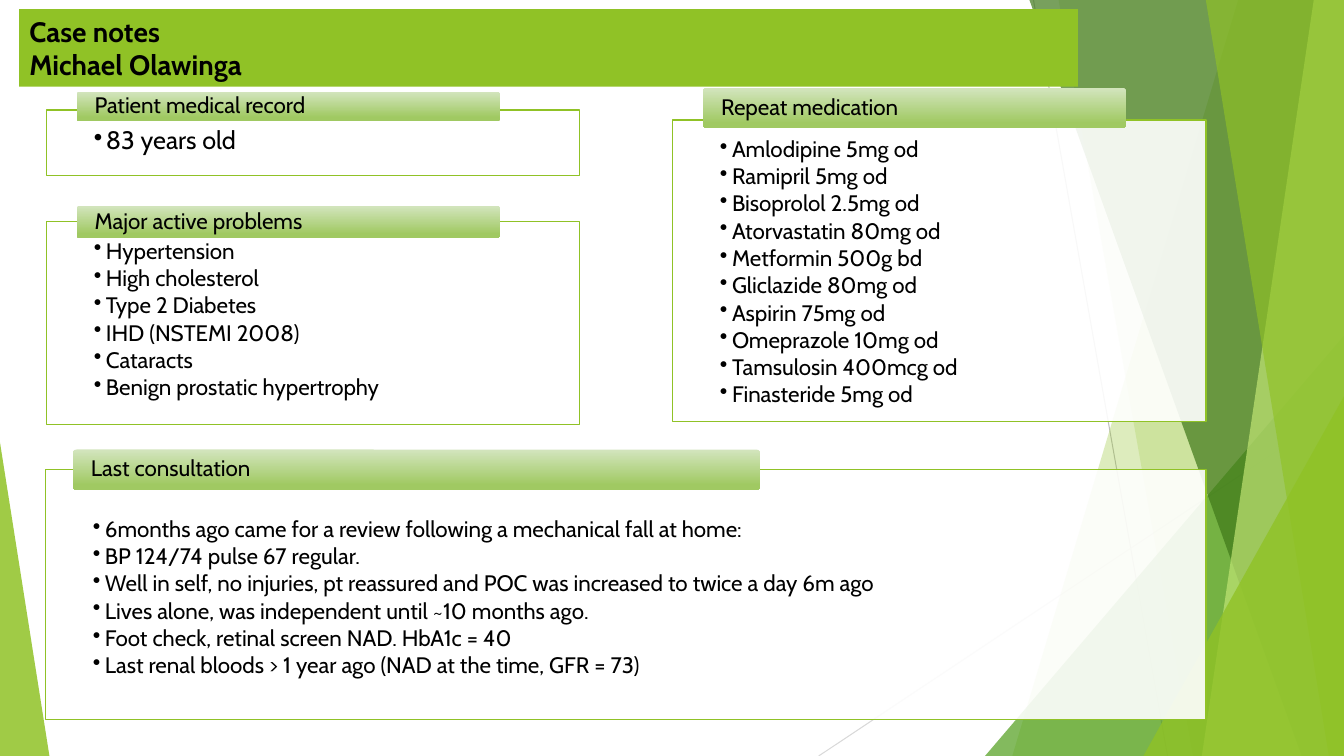
import pptx
import pptx.util
import pptx.dml.color
import pptx.enum.dml
import pptx.enum.shapes
import pptx.enum.text
import pptx.oxml
import pptx.oxml.ns
from pptx.util import Inches

COLOURS = {
    "lime": "90C226", "leaf": "54A021", "forest": "3F7819", "pale": "C0E474",
    "mist": "D3E5BE", "moss": "A0C962", "white": "FFFFFF", "black": "000000",
    "grey": "BFBFBF", "silver": "D9D9D9",
}
FONT = "Cabin"

LINES = [((10.25, 0), (11.58, 7.5), "grey"), ((13.33, 4.03), (8.12, 7.5), "silver")]
LEFT_BANDS = [
    ([(12.28, 0), (13.33, 0), (13.33, 7.5), (10.04, 7.5)], "lime", 30),
    ([(10.5, 0), (13.33, 0), (13.33, 7.5), (11.83, 7.5)], "lime", 20),
]
RIGHT_BANDS = [
    ([(10.21, 0), (13.33, 0), (13.33, 7.5), (12.91, 7.5)], "forest", 70),
    ([(13.03, 0), (13.33, 0), (13.33, 7.5), (11.92, 7.5)], "pale", 70),
    ([(11.96, 0), (13.33, 0), (13.33, 7.5), (13.18, 7.5)], "lime", 65),
]
FRONT_TRIANGLES = [((11.34, 3.93, 1.99, 3.57), 1, "lime", 80),
                   ((0, 4.39, 0.49, 3.11), 0, "lime", 85)]

PANELS = [
    {"heading": "Patient medical record", "tab": (0.76, 0.91, 4.2, 0.29),
     "body": (0.46, 1.09, 5.29, 0.65), "size": 18, "items": ["83 years old"]},
    {"heading": "Major active problems", "tab": (0.76, 2.04, 4.2, 0.32),
     "body": (0.46, 2.2, 5.29, 2.01),
     "items": ["Hypertension", "High cholesterol", "Type 2 Diabetes",
               "IHD (NSTEMI 2008)", "Cataracts", "Benign prostatic hypertrophy"]},
    {"heading": "Repeat medication", "tab": (6.97, 0.87, 4.2, 0.4),
     "body": (6.67, 1.19, 5.29, 2.99),
     "items": ["Amlodipine 5mg od", "Ramipril 5mg od", "Bisoprolol 2.5mg od",
               "Atorvastatin 80mg od", "Metformin 500g bd", "Gliclazide 80mg od",
               "Aspirin 75mg od", "Omeprazole 10mg od", "Tamsulosin 400mcg od",
               "Finasteride 5mg od"]},
    {"heading": "Last consultation", "tab": (0.72, 4.46, 6.82, 0.4),
     "body": (0.45, 4.66, 11.51, 2.48), "top": 0.48,
     "items": ["6months ago came for a review following a mechanical fall at home:",
               "BP 124/74 pulse 67 regular.",
               "Well in self, no injuries, pt reassured and POC was increased to twice a day 6m ago",
               "Lives alone, was independent until ~10 months ago.",
               "Foot check, retinal screen NAD. HbA1c = 40",
               "Last renal bloods > 1 year ago (NAD at the time, GFR = 73)"]},
]


class NotesPage:
    """Draws styled elements of the patient notes on one slide."""

    def __init__(self, page):
        self.page = page
        self.shapes = page.shapes

    def colour(self, name):
        return pptx.dml.color.RGBColor.from_string(COLOURS[name])

    def paint(self, shape, name, opacity=100):
        shape.shadow.inherit = False
        shape.line.fill.background()
        shape.fill.solid()
        shape.fill.fore_color.rgb = self.colour(name)
        if opacity < 100:
            tint = shape.fill._xPr.find(".//" + pptx.oxml.ns.qn("a:srgbClr"))
            alpha = pptx.oxml.parse_xml(
                f'<a:alpha {pptx.oxml.ns.nsdecls("a")} val="{opacity * 1000}"/>')
            tint.append(alpha)

    def line(self, start, end, name):
        connector = self.shapes.add_connector(
            pptx.enum.shapes.MSO_CONNECTOR.STRAIGHT,
            *(Inches(value) for value in start + end))
        connector.line.color.rgb = self.colour(name)
        connector.line.width = pptx.util.Pt(0.75)
        connector._element.spPr.append(
            pptx.oxml.parse_xml(f'<a:effectLst {pptx.oxml.ns.nsdecls("a")}/>'))

    def band(self, corners, name, opacity):
        points = [(Inches(x), Inches(y)) for x, y in corners]
        builder = self.shapes.build_freeform(*points[0], scale=1.0)
        builder.add_line_segments(points[1:], close=True)
        self.paint(builder.convert_to_shape(), name, opacity)

    def box(self, kind, place):
        return self.shapes.add_shape(kind, *(Inches(value) for value in place))

    def triangle(self, place, apex, name, opacity):
        shape = self.box(pptx.enum.shapes.MSO_SHAPE.ISOSCELES_TRIANGLE, place)
        shape.adjustments[0] = apex
        self.paint(shape, name, opacity)

    def set_text(self, shape, lines, size, margins, middle=True, bold=False):
        frame = shape.text_frame
        frame.text = "\n".join(lines)
        frame.word_wrap = True
        frame.auto_size = pptx.enum.text.MSO_AUTO_SIZE.NONE
        anchors = pptx.enum.text.MSO_ANCHOR
        frame.vertical_anchor = anchors.MIDDLE if middle else anchors.TOP
        frame.margin_left = frame.margin_right = Inches(margins[0])
        frame.margin_top, frame.margin_bottom = Inches(margins[1]), Inches(margins[2])
        for para in frame.paragraphs:
            para.alignment = pptx.enum.text.PP_ALIGN.LEFT
            for span in para.runs:
                span.font.name = FONT
                span.font.size = pptx.util.Pt(size)
                span.font.bold = bold
                span.font.color.rgb = self.colour("black")
        return frame.paragraphs

    def bullet(self, para):
        para.line_spacing = 0.9
        para.space_after = pptx.util.Pt(2.2)
        properties = para._p.get_or_add_pPr()
        properties.set("marL", str(Inches(0.12)))
        properties.set("indent", str(-Inches(0.12)))
        properties.append(pptx.oxml.parse_xml(
            f'<a:buChar {pptx.oxml.ns.nsdecls("a")} char="•"/>'))

    def panel(self, heading, tab, body, items, size=16, top=0.18):
        frame = self.box(pptx.enum.shapes.MSO_SHAPE.RECTANGLE, body)
        self.paint(frame, "white", 90)
        frame.line.color.rgb = self.colour("lime")
        frame.line.width = pptx.util.Pt(1)
        for para in self.set_text(frame, items, size, (0.47, top, 0.09), middle=False):
            self.bullet(para)
        label = self.box(pptx.enum.shapes.MSO_SHAPE.ROUNDED_RECTANGLE, tab)
        label.adjustments[0] = 0.1
        self.paint(label, "mist")
        label.fill.gradient()
        label.fill.gradient_angle = 270
        for stop, position, name in zip(label.fill.gradient_stops, (0, 0.88), ("mist", "moss")):
            stop.position = position
            stop.color.rgb = self.colour(name)
        self.set_text(label, [heading], 16, (0.17, 0.01, 0.01))[0].line_spacing = 0.9

    def title(self, lines, place):
        title = self.shapes.title
        title.left, title.top, title.width, title.height = map(Inches, place)
        title.fill.solid()
        title.fill.fore_color.rgb = self.colour("lime")
        self.set_text(title, lines, 20, (0.1, 0.05, 0.05), bold=True)
        self.shapes._spTree.append(title._element)


def main():
    deck = pptx.Presentation()
    deck.slide_width, deck.slide_height = Inches(13.33), Inches(7.5)
    notes = NotesPage(deck.slides.add_slide(deck.slide_layouts[5]))
    for line in LINES:
        notes.line(*line)
    for band in LEFT_BANDS:
        notes.band(*band)
    notes.triangle((9.77, 3.33, 3.56, 4.17), 1, "leaf", 72)
    for band in RIGHT_BANDS:
        notes.band(*band)
    for triangle in FRONT_TRIANGLES:
        notes.triangle(*triangle)
    for panel in PANELS:
        notes.panel(**panel)
    notes.title(["Case notes", "Michael Olawinga"], (0.19, 0.09, 10.5, 0.77))
    deck.save("out.pptx")


if __name__ == "__main__":
    main()
